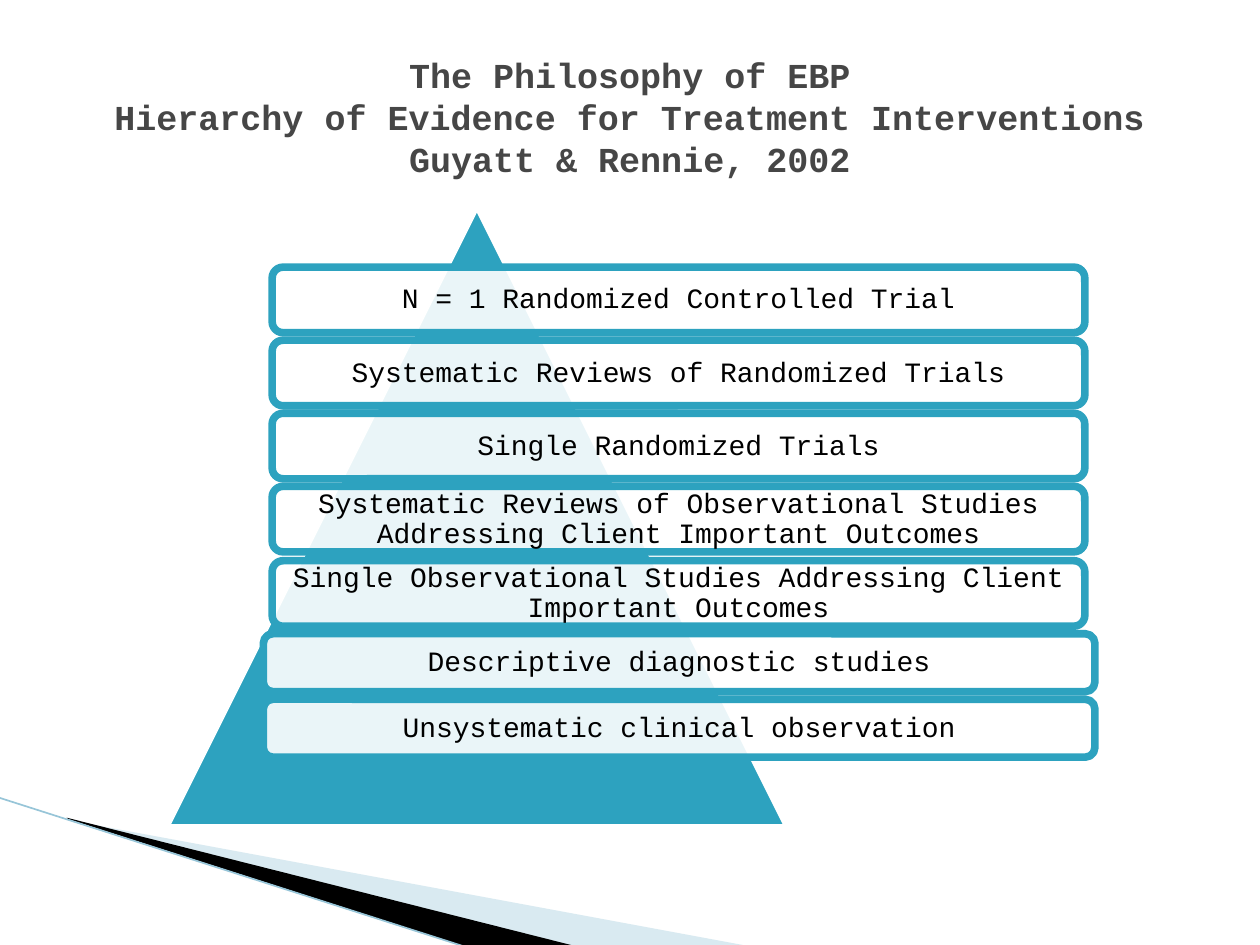
from dataclasses import dataclass

from lxml import etree
from pptx import Presentation
from pptx.dml.color import RGBColor
from pptx.enum.shapes import MSO_CONNECTOR, MSO_SHAPE
from pptx.enum.text import MSO_ANCHOR, PP_ALIGN
from pptx.oxml.ns import qn
from pptx.util import Pt

EMU_PER_PX = 9144
TRIANGLE = MSO_SHAPE.ISOSCELES_TRIANGLE
ROUNDED = MSO_SHAPE.ROUNDED_RECTANGLE
STRAIGHT = MSO_CONNECTOR.STRAIGHT
MIDDLE = MSO_ANCHOR.MIDDLE
CENTER = PP_ALIGN.CENTER


@dataclass(frozen=True)
class Theme:
    font: str = "Courier New"
    title_size: int = 20
    level_size: int = 16
    title: str = "464646"
    ink: str = "000000"
    paper: str = "FFFFFF"
    accent: str = "2DA2BF"
    swoosh: str = "A0CBDC"
    edge: str = "97C5D8"
    outline: float = 4.33
    hairline: float = 0.95


THEME = Theme()

TITLE = (
    "The Philosophy of EBP",
    "Hierarchy of Evidence for Treatment Interventions",
    "Guyatt & Rennie, 2002",
)
UPPER_LEVELS = (
    "N = 1 Randomized Controlled Trial",
    "Systematic Reviews of Randomized Trials",
    "Single Randomized Trials",
    "Systematic Reviews of Observational Studies Addressing Client Important Outcomes",
    "Single Observational Studies Addressing Client Important Outcomes",
)
LOWER_LEVELS = (
    "Descriptive diagnostic studies",
    "Unsystematic clinical observation",
)
LEVEL_GROUPS = (
    (UPPER_LEVELS, 216, 645, 52),
    (LOWER_LEVELS, 209, 660, 46),
)
LEVELS_TOP = 212
LEVEL_GAP = 6.25
SWOOSHES = (
    (((55, 651), (595, 751), (456, 751), (55, 650)), THEME.swoosh, 40),
    (((53, 649), (457, 751), (372, 752), (54, 650)), THEME.ink, 100),
)


def px(*lengths):
    return [length * EMU_PER_PX for length in lengths]


def apply_format(target, values):
    for name, value in values.items():
        setattr(target, name, value)


def paint(shape, color, opacity=100):
    shape.shadow.inherit = False
    shape.fill.solid()
    shape.fill.fore_color.rgb = RGBColor.from_string(color)
    if opacity < 100:
        color_node = shape.fill._xPr.find(qn("a:solidFill"))[0]
        etree.SubElement(color_node, qn("a:alpha"), val=str(opacity * 1000))


def draw_line(line, color, width):
    line.color.rgb = RGBColor.from_string(color)
    line.width = Pt(width)


def write_text(box, text, size, color, bold=False, spacing=1.0):
    frame = box.text_frame
    apply_format(frame, {"word_wrap": True, "vertical_anchor": MIDDLE})
    para = frame.paragraphs[0]
    para.text = text
    apply_format(para, {"alignment": CENTER, "line_spacing": spacing})
    for span in para.runs:
        apply_format(span.font, {"name": THEME.font, "size": Pt(size), "bold": bold})
        span.font.color.rgb = RGBColor.from_string(color)


def add_swoosh(page, points, color, opacity):
    builder = page.shapes.build_freeform(*points[0], scale=EMU_PER_PX)
    builder.add_line_segments(points[1:], close=True)
    shape = builder.convert_to_shape()
    paint(shape, color, opacity)
    shape.line.fill.background()


def add_edge(page, start, end):
    edge = page.shapes.add_connector(STRAIGHT, *px(*start), *px(*end))
    draw_line(edge.line, THEME.edge, THEME.hairline)
    etree.SubElement(edge._element.spPr, qn("a:effectLst"))


def add_pyramid(page, *bounds):
    pyramid = page.shapes.add_shape(TRIANGLE, *px(*bounds))
    paint(pyramid, THEME.accent)
    draw_line(pyramid.line, THEME.paper, THEME.outline)


def add_level(page, text, *bounds):
    box = page.shapes.add_shape(ROUNDED, *px(*bounds))
    paint(box, THEME.paper, 90)
    draw_line(box.line, THEME.accent, THEME.outline)
    sides = ("margin_left", "margin_top", "margin_right", "margin_bottom")
    apply_format(box.text_frame, dict.fromkeys(sides, *px(7)))
    write_text(box, text, THEME.level_size, THEME.ink, spacing=0.9)


def add_levels(page):
    top = LEVELS_TOP
    for levels, left, width, height in LEVEL_GROUPS:
        for text in levels:
            add_level(page, text, left, int(top), width, height)
            top += height + LEVEL_GAP


def add_title(page, lines, *bounds):
    box = page.shapes.add_textbox(*px(*bounds))
    write_text(box, "\v".join(lines), THEME.title_size, THEME.title, bold=True)


def main():
    deck = Presentation()
    deck.slide_width, deck.slide_height = px(1000, 750)
    page = deck.slides.add_slide(deck.slide_layouts[6])
    for points, color, opacity in SWOOSHES:
        add_swoosh(page, points, color, opacity)
    add_edge(page, (-1, 633), (371, 752))
    add_pyramid(page, 131, 162, 495, 495)
    add_levels(page)
    add_title(page, TITLE, 50, 30, 900, 125)
    deck.save("out.pptx")


if __name__ == "__main__":
    main()
